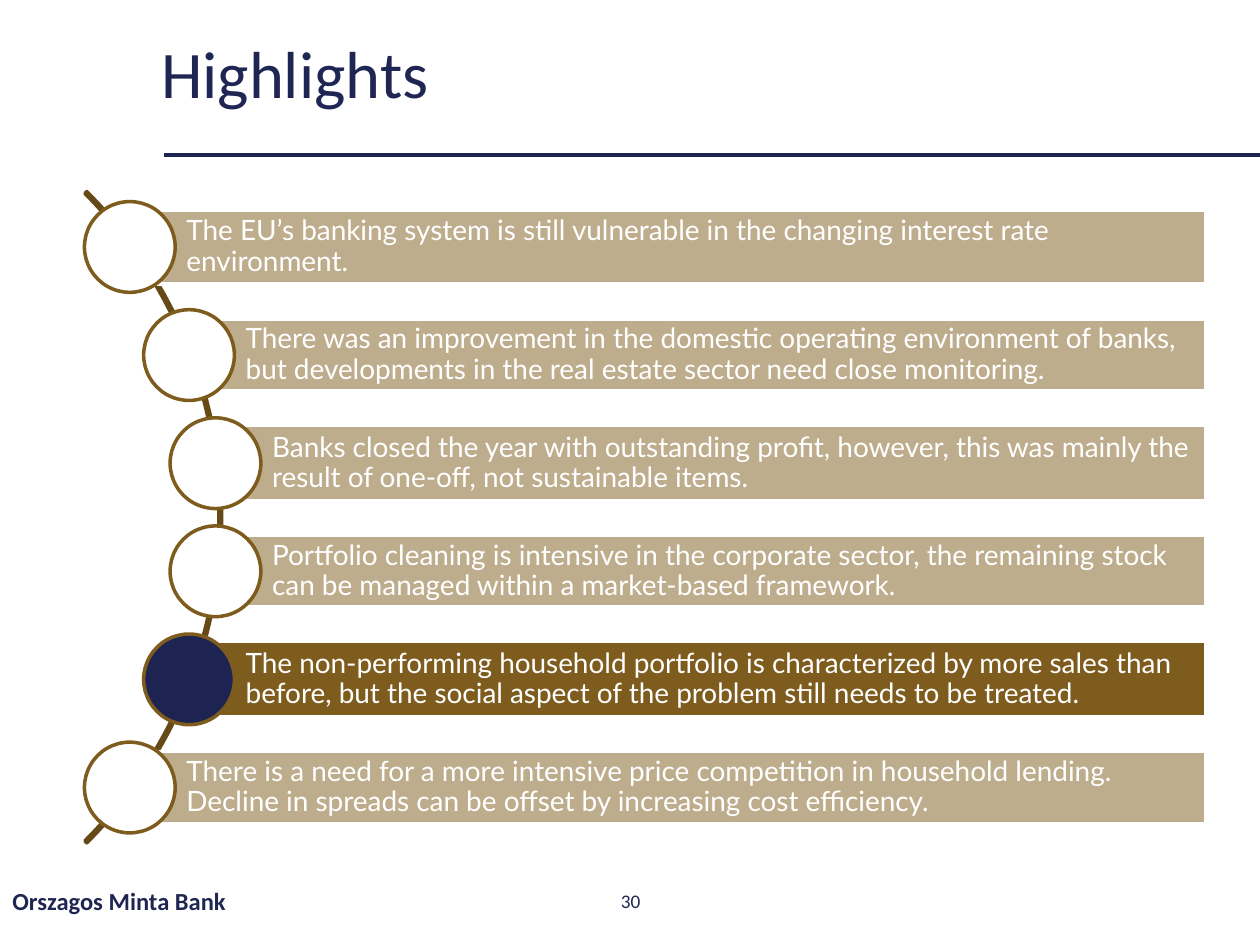
from lxml import etree
from pptx import Presentation
from pptx.dml.color import RGBColor
from pptx.enum.shapes import MSO_CONNECTOR, MSO_SHAPE as SHAPE
from pptx.enum.text import MSO_ANCHOR, PP_ALIGN as ALIGN
from pptx.oxml.ns import qn
from pptx.util import Inches, Pt

COLORS = {"navy": "1E2452", "text": "202653", "brown": "7E5C1D",
          "arc": "654A17", "white": "FFFFFF"}

TITLE = "Highlights"
BANK = "Orszagos Minta Bank"
PAGE_NUMBER = "30"

# Circle centre from the left, bar height, statement
HIGHLIGHTS = [
    (1.03, 0.59, "The EU’s banking system is still vulnerable in the changing "
                 "interest rate environment."),
    (1.5, 0.57, "There was an improvement in the domestic operating environment of "
                "banks, but developments in the real estate sector need close monitoring."),
    (1.71, 0.6, "Banks closed the year with outstanding profit, however, this was "
                "mainly the result of one-off, not sustainable items."),
    (1.71, 0.57, "Portfolio cleaning is intensive in the corporate sector, the "
                 "remaining stock can be managed within a market-based framework."),
    (1.5, 0.6, "The non-performing household portfolio is characterized by more sales "
               "than before, but the social aspect of the problem still needs to be treated."),
    (1.03, 0.57, "There is a need for a more intensive price competition in household "
                 "lending. Decline in spreads can be offset by increasing cost efficiency."),
]
CURRENT = 4

FIRST_CENTER, LAST_CENTER = 1.96, 6.25
BAR_RIGHT = 9.57
CIRCLE = 0.72

prs = Presentation()
prs.slide_width, prs.slide_height = Inches(10), Inches(7.5)
slide = prs.slides.add_slide(prs.slide_layouts[6])


def rgb(name):
    return RGBColor.from_string(COLORS[name])


def write(shape, text, *, size, color="text", font="Calibri", bold=False,
          align=ALIGN.LEFT, line_spacing=None, margins=(0.1, 0.05, 0.1, 0.05)):
    frame = shape.text_frame
    frame.word_wrap = True
    frame.vertical_anchor = MSO_ANCHOR.MIDDLE
    (frame.margin_left, frame.margin_top,
     frame.margin_right, frame.margin_bottom) = map(Inches, margins)
    paragraph = frame.paragraphs[0]
    paragraph.alignment = align
    paragraph.line_spacing = line_spacing
    run = paragraph.add_run()
    run.text = text
    run.font.name, run.font.size, run.font.bold = font, Pt(size), bold
    run.font.color.rgb = rgb(color)


def add_text(box, text, **style):
    write(slide.shapes.add_textbox(*map(Inches, box)), text, **style)


def add_outlined(kind, box, line, fill=None, alpha=None):
    shape = slide.shapes.add_shape(kind, *map(Inches, box))
    shape.shadow.inherit = False
    shape.line.color.rgb, shape.line.width = rgb(line), Pt(2)
    if fill is None:
        shape.fill.background()
        return shape
    shape.fill.solid()
    shape.fill.fore_color.rgb = rgb(fill)
    if alpha is not None:
        color = shape.fill._xPr.find(qn("a:solidFill"))[0]
        etree.SubElement(color, qn("a:alpha")).set("val", str(alpha * 1000))
    return shape


# Header
rule = slide.shapes.add_connector(MSO_CONNECTOR.STRAIGHT, Inches(1.3), Inches(1.23),
                                  Inches(10), Inches(1.23))
rule.line.color.rgb, rule.line.width = rgb("navy"), Pt(2.25)
etree.SubElement(rule._element.spPr, qn("a:effectLst"))
add_text((1.18, 0.2, 8.19, 0.83), TITLE, size=38, line_spacing=0.9)

# Footer
add_text((0, 6.95, 3.38, 0.4), BANK, size=14, bold=True)
add_text((3.88, 6.95, 2.25, 0.4), PAGE_NUMBER, size=11, align=ALIGN.CENTER)

# Arc behind the circles: 315 to 45 degrees, almost no thickness
arc = add_outlined(SHAPE.BLOCK_ARC, (-5.55, 0.45, 7.31, 7.31), "arc")
for index, value in enumerate((189, 27, 0.003)):
    arc.adjustments[index] = value

# Bars and circles
pitch = (LAST_CENTER - FIRST_CENTER) / (len(HIGHLIGHTS) - 1)
for row, (center_x, height, statement) in enumerate(HIGHLIGHTS):
    center_y = FIRST_CENTER + row * pitch
    current = row == CURRENT
    bar = add_outlined(SHAPE.RECTANGLE,
                       (center_x, center_y - height / 2, BAR_RIGHT - center_x, height),
                       "white", "brown", None if current else 50)
    write(bar, statement, size=16, color="white", font="Lato", line_spacing=0.9,
          margins=(0.45, 0.04, 0.04, 0.04))
    add_outlined(SHAPE.OVAL,
                 (center_x - CIRCLE / 2, center_y - CIRCLE / 2, CIRCLE, CIRCLE),
                 "brown", "navy" if current else "white")

prs.save("out.pptx")
